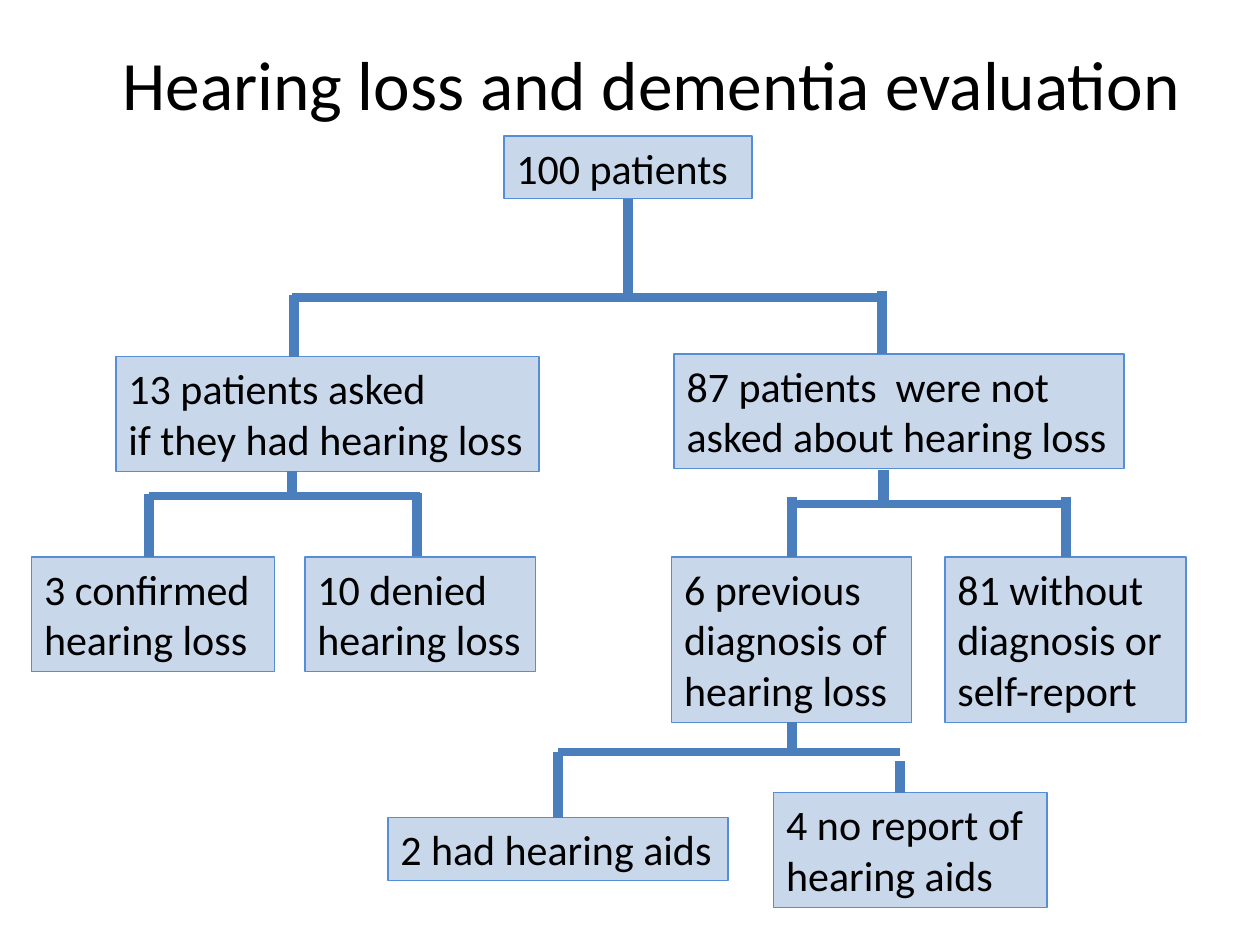
from lxml import etree
from pptx import Presentation
from pptx.dml.color import RGBColor
from pptx.enum.shapes import MSO_CONNECTOR, MSO_SHAPE
from pptx.enum.text import MSO_ANCHOR, MSO_AUTO_SIZE, PP_ALIGN
from pptx.oxml.ns import qn
from pptx.util import Cm, Pt

RECT = MSO_SHAPE.RECTANGLE
LINE = MSO_CONNECTOR.STRAIGHT
MIDDLE = MSO_ANCHOR.MIDDLE
TOP = MSO_ANCHOR.TOP
GROW = MSO_AUTO_SIZE.SHAPE_TO_FIT_TEXT
LEFT = PP_ALIGN.LEFT
CENTER = PP_ALIGN.CENTER
BLACK = RGBColor(0, 0, 0)
FILL = RGBColor(0x4F, 0x81, 0xBD)
EDGE = RGBColor(0x55, 0x8E, 0xD5)
BRANCH = RGBColor(0x4B, 0x7E, 0xBC)


def write(frame, text, size, align):
    frame.text = text
    for para in frame.paragraphs:
        para.alignment = align
        para.font.name = "Calibri"
        para.font.size = Pt(size)
        para.font.color.rgb = BLACK


def link(x1, y1, x2, y2, width):
    line = slide.shapes.add_connector(LINE, Cm(x1), Cm(y1), Cm(x2), Cm(y2))
    line.line.color.rgb = BRANCH
    line.line.width = Pt(width)
    etree.SubElement(line._element.spPr, qn("a:effectLst"))
    return line


deck = Presentation()
deck.slide_width = Cm(25.4)
deck.slide_height = Cm(19.05)
slide = deck.slides.add_slide(deck.slide_layouts[6])

groups = [
    ("all", 10.16, 2.74, 5, 1.27, "100 patients "),
    ("asked", 2.34, 7.19, 8.53, 2.31, "13 patients asked\nif they had hearing loss"),
    ("not", 13.59, 7.14, 9.07, 2.31, "87 patients  were not\nasked about hearing loss"),
    ("loss", 0.64, 11.23, 4.9, 2.31, "3 confirmed\nhearing loss"),
    ("denied", 6.15, 11.23, 4.65, 2.31, "10 denied\nhearing loss"),
    ("known", 13.54, 11.23, 4.84, 3.33, "6 previous\ndiagnosis of\nhearing loss"),
    ("without", 19.05, 11.23, 4.86, 3.33, "81 without\ndiagnosis or\nself-report"),
    ("aids", 7.82, 16.48, 6.86, 1.27, "2 had hearing aids"),
    ("none", 15.6, 15.98, 5.51, 2.31, "4 no report of\nhearing aids"),
]
boxes = {}
for key, x, y, w, h, text in groups:
    box = slide.shapes.add_shape(RECT, Cm(x), Cm(y), Cm(w), Cm(h))
    box.shadow.inherit = False
    box.fill.solid()
    box.fill.fore_color.rgb = FILL
    color = box._element.spPr.find(qn("a:solidFill"))[0]
    etree.SubElement(color, qn("a:alpha"), val="31000")
    box.line.color.rgb = EDGE
    box.line.width = Pt(0.75)
    frame = box.text_frame
    frame.word_wrap = False
    frame.auto_size = GROW
    frame.vertical_anchor = TOP
    write(frame, text, 24, LEFT)
    boxes[key] = box

stems = [
    (12.66, 4.01, 6, "all", None),
    (5.92, 5.94, 7.19, None, None),
    (17.78, 5.87, 7.14, None, None),
    (3, 9.96, 11.23, None, None),
    (8.41, 9.93, 11.2, None, None),
    (11.25, 15.16, 16.48, None, "aids"),
    (18.14, 15.34, 15.98, None, None),
    (17.81, 9.47, 10.08, None, None),
    (5.89, 9.5, 10.08, None, None),
    (15.96, 14.56, 15.19, "known", None),
    (15.96, 10.01, 11.23, None, "known"),
    (21.48, 10.01, 11.23, None, "without"),
]
for x, top, foot, above, below in stems:
    stem = link(x, top, x, foot, 5.75)
    if above:
        stem.begin_connect(boxes[above], 2)
    if below:
        stem.end_connect(boxes[below], 0)

bars = [(5.89, 17.81, 6), (3, 8.46, 10), (15.9, 21.48, 10.16), (11.25, 18.14, 15.16)]
for start, end, y in bars:
    link(start, y, end, y, 4.75)

title = slide.shapes.add_textbox(Cm(1.7), Cm(0.08), Cm(22.86), Cm(3.18))
title.text_frame.word_wrap = True
title.text_frame.vertical_anchor = MIDDLE
write(title.text_frame, "Hearing loss and dementia evaluation", 39.6, CENTER)

deck.save("out.pptx")
